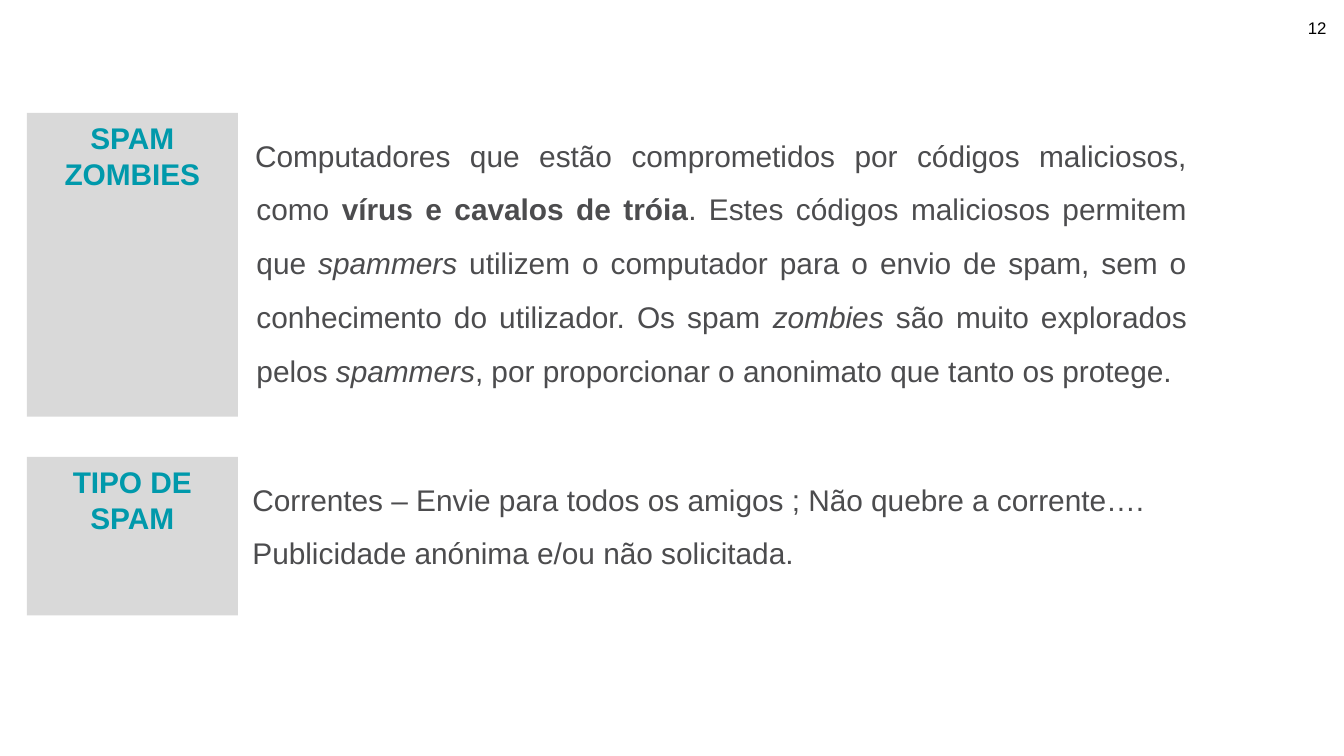
from pptx import Presentation
from pptx.dml.color import RGBColor
from pptx.enum import shapes, text
from pptx.util import Inches, Pt

GREY = RGBColor(0xD9, 0xD9, 0xD9)
TEAL = RGBColor(0x00, 0x99, 0xAB)
DARK = RGBColor(0x4C, 0x4C, 0x4E)
BLACK = RGBColor(0, 0, 0)

# A paragraph is a list of (words, style) runs.
ZOMBIES = [[
    ("Computadores que estão comprometidos por códigos maliciosos, como ", ""),
    ("vírus e cavalos de tróia", "bold"),
    (". Estes códigos maliciosos permitem que ", ""),
    ("spammers", "italic"),
    (" utilizem o computador para o envio de spam, sem o conhecimento do "
     "utilizador. Os spam ", ""),
    ("zombies", "italic"),
    (" são muito explorados pelos ", ""),
    ("spammers", "italic"),
    (", por proporcionar o anonimato que tanto os protege.", ""),
]]
SPAM_TYPES = [
    [("Correntes – Envie para todos os amigos ; Não quebre a corrente….", "")],
    [("Publicidade anónima e/ou não solicitada.", "")],
]
SECTIONS = [
    dict(label="SPAM ZOMBIES", top=0.84, label_height=2.26, body=ZOMBIES,
         left=1.61, width=7.32, height=2.12, margin=0.2,
         align=text.PP_ALIGN.JUSTIFY),
    dict(label="TIPO DE SPAM", top=3.4, label_height=1.18, body=SPAM_TYPES,
         left=1.69, width=7.64, height=0.91, margin=0.1,
         align=text.PP_ALIGN.LEFT),
]
PAGE_NUMBER = "12"
SLIDE_WIDTH = Inches(10)
SLIDE_HEIGHT = SLIDE_WIDTH * 9 // 16
LABEL_LEFT, LABEL_WIDTH = 0.2, 1.57
HANGING = -0.01


def write(shape, paragraphs, size=16, color=DARK, align=text.PP_ALIGN.CENTER,
          anchor=text.MSO_ANCHOR.TOP, spacing=None, margin=0, indent=0):
    frame = shape.text_frame
    frame.word_wrap = True
    frame.vertical_anchor = anchor
    for number, runs in enumerate(paragraphs):
        paragraph = frame.add_paragraph() if number else frame.paragraphs[0]
        paragraph.alignment = align
        paragraph.line_spacing = spacing
        properties = paragraph._p.get_or_add_pPr()
        properties.set("marL", str(Inches(margin)))
        properties.set("indent", str(Inches(indent)))
        for words, style in runs:
            run = paragraph.add_run()
            run.text = words
            run.font.name = "Arial"
            run.font.size = Pt(size)
            run.font.color.rgb = color
            run.font.bold = style == "bold"
            run.font.italic = style == "italic"


def add_text(slide, left, top, width, height, paragraphs, **style):
    box = slide.shapes.add_textbox(*map(Inches, (left, top, width, height)))
    write(box, paragraphs, **style)


def add_label(slide, top, height, label):
    panel = slide.shapes.add_shape(
        shapes.MSO_SHAPE.RECTANGLE,
        *map(Inches, (LABEL_LEFT, top, LABEL_WIDTH, height)))
    panel.shadow.inherit = False
    panel.fill.solid()
    panel.fill.fore_color.rgb = GREY
    panel.line.fill.background()
    write(panel, [[(label, "bold")]], color=TEAL)


def main():
    deck = Presentation()
    deck.slide_width, deck.slide_height = SLIDE_WIDTH, SLIDE_HEIGHT
    slide = deck.slides.add_slide(deck.slide_layouts.get_by_name("Blank"))
    for section in SECTIONS:
        add_text(slide, section["left"], section["top"], section["width"],
                 section["height"], section["body"], align=section["align"],
                 spacing=1.5, margin=section["margin"], indent=HANGING)
    for section in SECTIONS:
        add_label(slide, section["top"], section["label_height"],
                  section["label"])
    add_text(slide, 9.56, 0.06, 0.48, 0.3, [[(PAGE_NUMBER, "")]], size=9,
             color=BLACK, anchor=text.MSO_ANCHOR.MIDDLE)
    deck.save("out.pptx")


if __name__ == "__main__":
    main()
